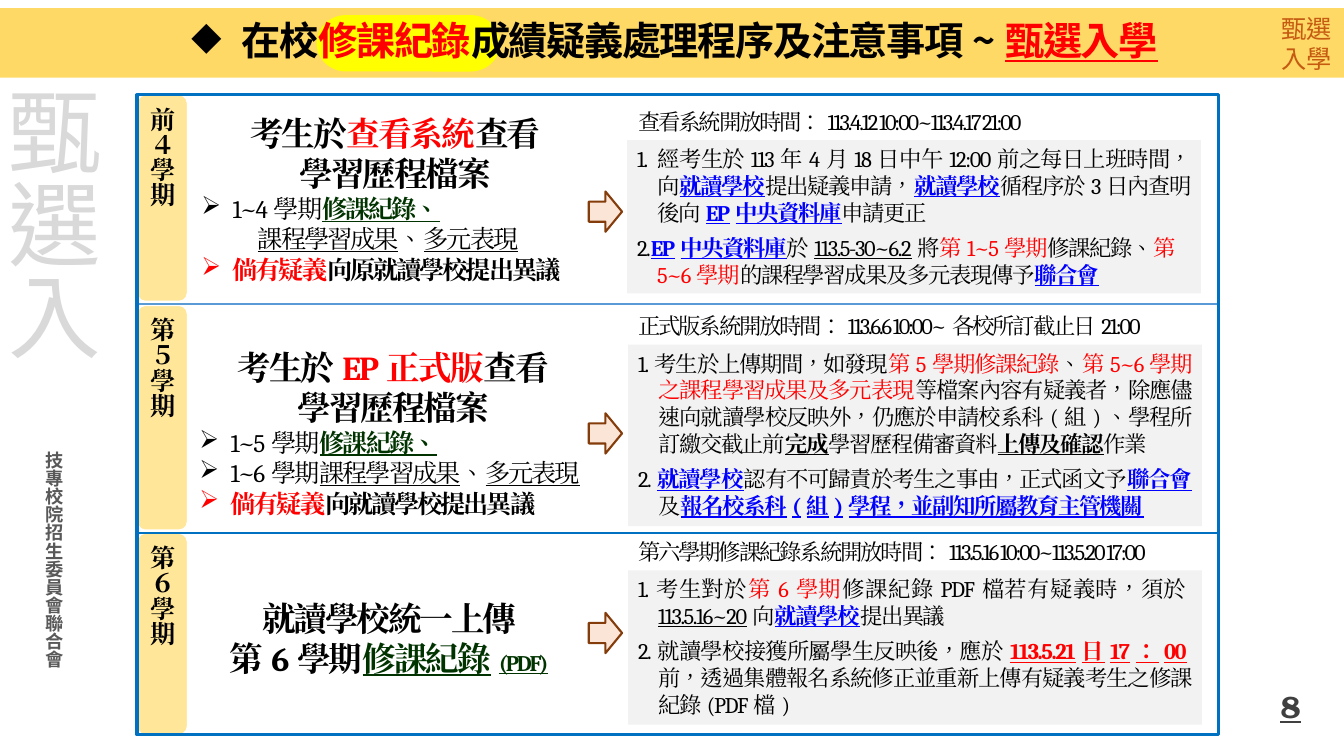
from lxml.etree import SubElement
from pptx import Presentation
from pptx.dml.color import RGBColor
from pptx.enum.shapes import MSO_CONNECTOR as Connector, MSO_SHAPE as Shape
from pptx.enum.text import MSO_ANCHOR as Anchor, MSO_AUTO_SIZE as AutoSize, PP_ALIGN as Align
from pptx.oxml.ns import qn
from pptx.util import Inches, Pt

CAMBRIA, SANS_JP, SANS_SC = "Cambria", "Noto Sans CJK JP", "Noto Sans CJK SC"
STYLES = {
    "plain": ("000000", False, False),
    "bold": ("000000", True, False),
    "under": ("000000", False, True),
    "strong": ("000000", True, True),
    "red": ("FF0000", False, False),
    "redbold": ("FF0000", True, False),
    "redlink": ("FF0000", True, True),
    "link": ("0000FF", True, True),
    "green": ("003300", True, True),
    "number": ("404040", True, True),
    "office": ("595959", True, False),
    "ghost": ("D9D9D9", False, False),
    "corner": ("C55A11", False, False),
}
HEADING = {"align": Align.CENTER, "size": 24, "spacing": -1.5}
BULLET = {"size": 18, "spacing": -1.5, "hang": 0.31, "bullet": "➢"}
INDENTED = {"size": 18, "spacing": -1.5, "margin": 0.56}
NOTE = {"size": 16, "spacing": -1, "hang": 0.2, "align": Align.JUSTIFY}
RECORDS = ("修課紀錄、", "green")
WORKS = [("課程學習成果", "under"), ("、", "plain"), ("多元表現", "under")]
DOUBT = ("倘有疑義", "redbold")

TERMS = [
    {
        "label": "前４學期", "label_at": (1.36, 0.94, 0.5, 2.05),
        "task_at": (1.9, 1.07, 4.04, 1.82), "arrow_top": 1.9,
        "task": [
            (HEADING, [("考生於", "bold"), ("查看系統", "redbold"), ("查看", "bold")]),
            (HEADING, [("學習歷程檔案", "bold")]),
            (BULLET, [("1~4學期", "plain"), RECORDS]),
            (INDENTED, WORKS),
            (BULLET, [DOUBT, ("向原就讀學校提出異議", "bold")])],
        "dates": "查看系統開放時間：113.4.12 10:00~113.4.17 21:00",
        "dates_at": (6.23, 1.02, 4.71, 0.37), "notes_at": (6.22, 1.39, 5.69, 1.52),
        "notes": [
            (NOTE, [("1. 經考生於113年4月18日中午12:00前之每日上班時間，向", "plain"),
                    ("就讀學校", "link"), ("提出疑義申請，", "plain"), ("就讀學校", "link"),
                    ("循程序於3日內查明後向", "plain"), ("EP中央資料庫", "link"),
                    ("申請更正", "plain")]),
            (NOTE | {"align": Align.LEFT, "before": 6},
             [("2.", "plain"), ("EP中央資料庫", "link"), ("於", "plain"),
              ("113.5-30~6.2", "under"), ("將", "plain"), ("第1~5學期", "red"),
              ("修課紀錄、", "plain"), ("第5~6學期", "red"),
              ("的課程學習成果及多元表現傳予", "plain"), ("聯合會", "link")])],
    },
    {
        "label": "第５學期", "label_at": (1.36, 3.03, 0.5, 2.23),
        "task_at": (1.88, 3.39, 4.04, 1.82), "arrow_top": 4.1,
        "task": [
            (HEADING, [("考生於", "bold"), ("EP正式版", "redbold"), ("查看", "bold")]),
            (HEADING, [("學習歷程檔案", "bold")]),
            (BULLET, [("1~5學期", "plain"), RECORDS]),
            (BULLET, [("1~6學期", "plain"), *WORKS]),
            (BULLET, [DOUBT, ("向就讀學校提出異議", "bold")])],
        "dates": "正式版系統開放時間：113.6.6 10:00~各校所訂截止日21:00",
        "dates_at": (6.23, 3.05, 5.69, 0.37), "notes_at": (6.23, 3.42, 5.69, 1.8),
        "notes": [
            (NOTE, [("1.考生於上傳期間，如發現", "plain"), ("第5學期修課紀錄", "red"),
                    ("、", "plain"), ("第5~6學期之課程學習成果及多元表現", "red"),
                    ("等檔案內容有疑義者，除應儘速向就讀學校反映外，仍應於申請校系科(組)、"
                     "學程所訂繳交截止前", "plain"),
                    ("完成", "strong"), ("學習歷程備審資料", "plain"),
                    ("上傳及確認", "strong"), ("作業", "plain")]),
            (NOTE | {"before": 6},
             [("2.", "plain"), ("就讀學校", "link"),
              ("認有不可歸責於考生之事由，正式函文予", "plain"), ("聯合會", "link"),
              ("及", "plain"), ("報名校系科(組)學程，並副知所屬教育主管機關", "link")])],
    },
    {
        "label": "第６學期", "label_at": (1.36, 5.29, 0.5, 2),
        "task_at": (1.88, 5.88, 3.96, 0.91), "arrow_top": 6.08,
        "task": [
            (HEADING, [("就讀學校統一上傳", "bold")]),
            (HEADING, [("第6學期", "bold"), ("修課紀錄", "green"), ("(PDF)", "green", 16)])],
        "dates": "第六學期修課紀錄系統開放時間：113.5.16 10:00~113.5.20 17:00",
        "dates_at": (6.23, 5.29, 5.86, 0.37), "notes_at": (6.23, 5.66, 5.69, 1.53),
        "notes": [
            (NOTE, [("1.考生對於", "plain"), ("第6學期", "red"),
                    ("修課紀錄PDF檔若有疑義時，須於", "plain"), ("113.5.16~20", "under"),
                    ("向", "plain"), ("就讀學校", "link"), ("提出異議", "plain")]),
            (NOTE | {"before": 6},
             [("2.就讀學校接獲所屬學生反映後，應於", "plain"),
              ("113.5.21日17：00", "redlink"),
              ("前，透過集體報名系統修正並重新上傳有疑義考生之修課紀錄(PDF檔)", "plain")])],
    },
]


def paint(color_format, color):
    """Apply a hex colour to a fill or a font colour."""
    color_format.rgb = RGBColor.from_string(color)


def add_span(para, text, style, font, spacing, size=None):
    """Add one styled run to a paragraph."""
    span = para.add_run()
    span.text = text
    color, span.font.bold, span.font.underline = STYLES[style]
    paint(span.font.color, color)
    if size:
        span.font.size = Pt(size)
    props = span.font._element
    props.set("lang", "zh-TW")
    props.set("spc", str(int(spacing * 100)))
    SubElement(props, qn("a:ea"), typeface=font)
    if style == "green":
        outline = SubElement(props, qn("a:ln"), w=str(Pt(0.75)))
        SubElement(SubElement(outline, qn("a:solidFill")), qn("a:srgbClr"), val="00B050")
        props.insert(0, outline)


def format_paragraph(para, spans, size, align=Align.LEFT, font=CAMBRIA, spacing=0,
                     hang=0, margin=0, before=0, bullet=None):
    """Set the layout and font of a paragraph and fill in its runs."""
    para.alignment = align
    para.space_before = Pt(before)
    props = para._p.get_or_add_pPr()
    props.set("marL", str(Inches(hang or margin)))
    props.set("indent", str(-Inches(hang)))
    if bullet:
        SubElement(props, qn("a:buChar"), char=bullet)
    else:
        SubElement(props, qn("a:buNone"))
    para.font.size = Pt(size)
    para.font.name = font
    for span in spans:
        add_span(para, span[0], span[1], font, spacing, *span[2:])


def write(shape, paragraphs, anchor=Anchor.TOP, vertical=False, grow=False, wrap=True):
    """Fill a shape with formatted paragraphs."""
    frame = shape.text_frame
    frame.word_wrap = wrap
    frame.vertical_anchor = anchor
    frame.auto_size = AutoSize.SHAPE_TO_FIT_TEXT if grow else AutoSize.NONE
    if vertical:
        frame._txBody.bodyPr.set("vert", "eaVert")
    for index, (layout, spans) in enumerate(paragraphs):
        para = frame.add_paragraph() if index else frame.paragraphs[0]
        format_paragraph(para, spans, **layout)


def add_text(slide, at, paragraphs, **options):
    """Add a text box."""
    box = slide.shapes.add_textbox(*map(Inches, at))
    write(box, paragraphs, **options)


def add_block(slide, kind, at, fill=None, line=None, width=1):
    """Add a preset shape with an optional fill and outline."""
    block = slide.shapes.add_shape(kind, *map(Inches, at))
    block.shadow.inherit = False
    if fill:
        block.fill.solid()
        paint(block.fill.fore_color, fill)
    else:
        block.fill.background()
    if line:
        paint(block.line.color, line)
        block.line.width = Pt(width)
    else:
        block.line.fill.background()
    return block


def add_divider(slide, top, color):
    """Add a horizontal line between two terms."""
    divider = slide.shapes.add_connector(
        Connector.STRAIGHT, Inches(1.36), Inches(top), Inches(12.08), Inches(top))
    paint(divider.line.color, color)
    divider.line.width = Pt(1.5)
    SubElement(divider._element.spPr, qn("a:effectLst"))


def add_term(slide, term):
    """Add one row: label, task, arrow, dates and notes."""
    label = add_block(slide, Shape.ROUNDED_RECTANGLE, term["label_at"], "FFE699", "FFFFFF")
    write(label, [({"size": 18}, [(term["label"], "bold")])], Anchor.MIDDLE, vertical=True)
    add_text(slide, term["task_at"], term["task"], grow=True)
    add_block(slide, Shape.RIGHT_ARROW, (5.84, term["arrow_top"], 0.33, 0.4),
              "FBE5D6", "843C0B", 1.5)
    notes = add_block(slide, Shape.RECTANGLE, term["notes_at"], "F2F2F2")
    write(notes, term["notes"], grow=True)
    dates = {"size": 16, "spacing": -1.5, "align": Align.JUSTIFY}
    add_text(slide, term["dates_at"], [(dates, [(term["dates"], "plain")])], grow=True)


def add_surroundings(slide):
    """Add the title band, side texts and page number."""
    add_block(slide, Shape.RECTANGLE, (0, 0.08, 13.33, 0.69), "FFD966")
    number = {"size": 22, "font": "TeX Gyre Bonum", "align": Align.RIGHT}
    add_text(slide, (10, 6.81, 3, 0.4), [(number, [("8", "number")])], anchor=Anchor.MIDDLE)
    office = {"size": 13, "font": SANS_JP}
    add_text(slide, (0.27, 4.38, 0.42, 2.56),
             [(office, [("技專校院招生委員會聯合會", "office")])], vertical=True, grow=True)
    add_text(slide, (-0.2, 0.75, 1.31, 3.77),
             [({"size": 66, "font": SANS_SC}, [("甄選入", "ghost")])], vertical=True, grow=True)
    corner = {"size": 18, "font": SANS_JP, "align": Align.CENTER}
    add_text(slide, (12.6, 0.08, 0.71, 0.71),
             [(corner, [(text, "corner")]) for text in ("甄選", "入學")], grow=True, wrap=False)


def add_title(slide):
    """Place the title above its yellow highlight."""
    add_block(slide, Shape.FLOWCHART_TERMINATOR, (3.14, 0.15, 1.82, 0.56), "FFFF00")
    title = slide.shapes.title
    title.left, title.top, title.width, title.height = map(Inches, (0.04, 0.19, 13.3, 0.47))
    layout = {"size": 28, "font": SANS_SC, "align": Align.CENTER, "spacing": -1,
              "hang": 0.5, "bullet": "◆"}
    write(title, [(layout, [("在校", "bold"), ("修課紀錄", "redbold"),
                            ("成績疑義處理程序及注意事項~", "bold"),
                            ("甄選入學", "redlink")])], Anchor.MIDDLE)
    title.text_frame.paragraphs[0].line_spacing = 0.9
    title._element.getparent().append(title._element)


def main():
    """Build the slide and save the deck."""
    deck = Presentation()
    deck.slide_width, deck.slide_height = Inches(13.33), Inches(7.5)
    slide = deck.slides.add_slide(deck.slide_layouts[5])
    add_surroundings(slide)
    for term in TERMS:
        add_term(slide, term)
    add_divider(slide, 3.02, "5B9BD5")
    add_divider(slide, 5.29, "0070C0")
    add_block(slide, Shape.RECTANGLE, (1.36, 0.94, 10.73, 6.35), line="0070C0", width=2.25)
    add_title(slide)
    deck.save("out.pptx")


if __name__ == "__main__":
    main()
